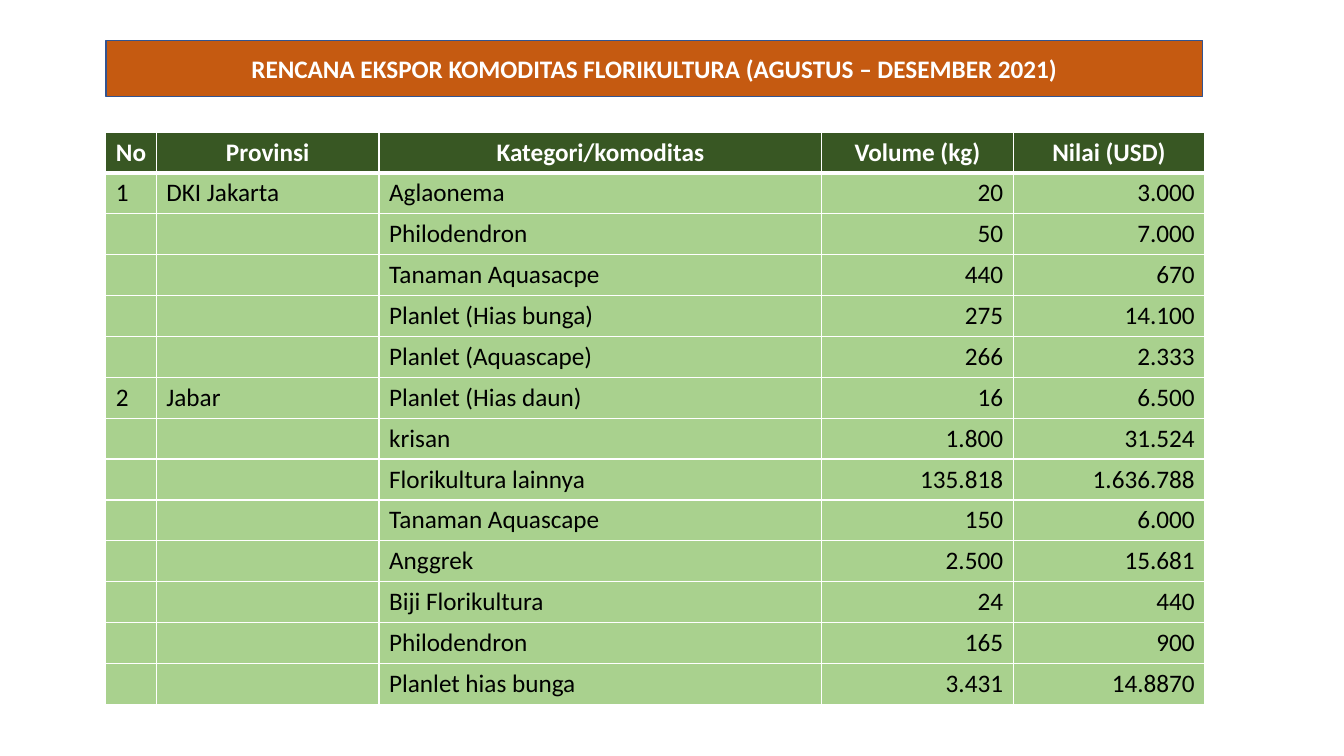
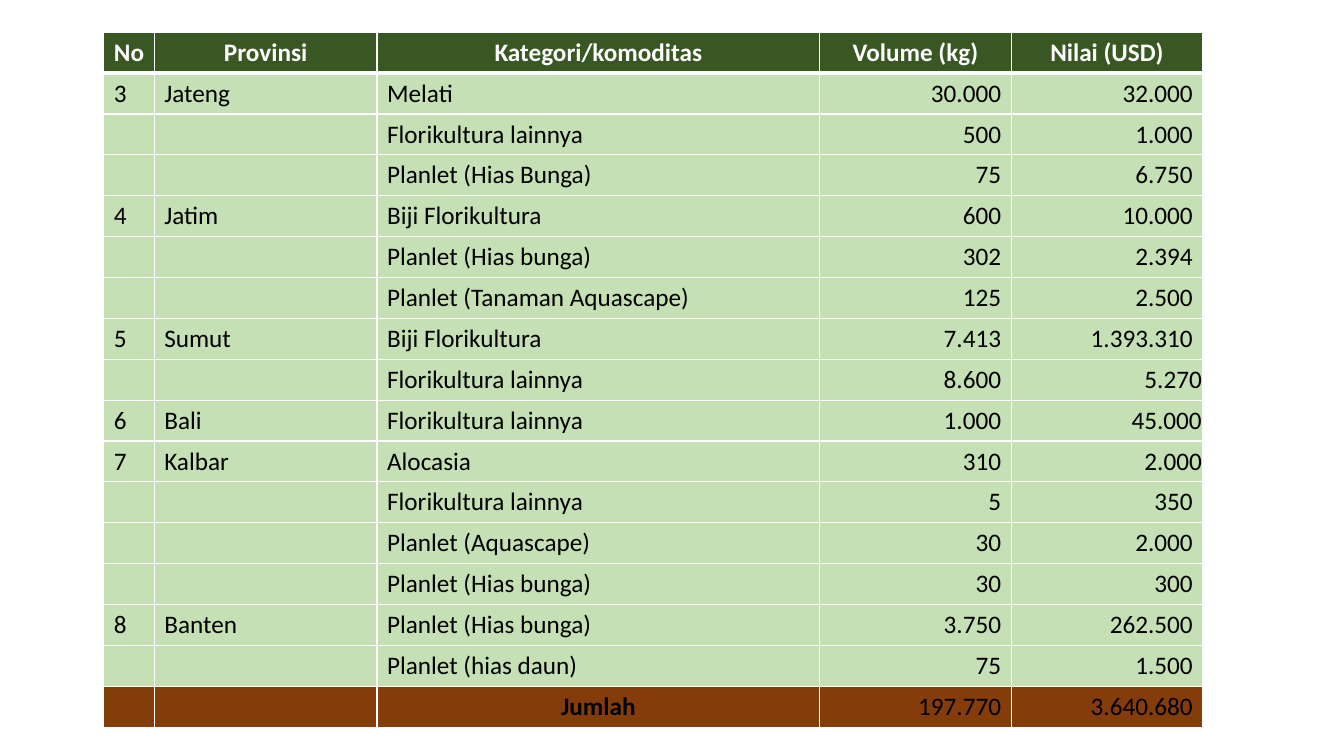
from lxml import etree
from pptx import Presentation
from pptx.dml.color import RGBColor
from pptx.enum import shapes, text
from pptx.oxml import ns
from pptx.util import Inches, Pt

COLORS = {
    "white": "FFFFFF",
    "black": "000000",
    "header": "385723",
    "green": "A9D18E",
    "pale_green": "C5E0B4",
    "total": "843C0B",
    "banner": "C55A11",
    "banner_line": "325491",
}
FONT = "Calibri"
FONT_SIZE = Pt(18)
COLUMN_WIDTHS = [0.5, 2.21, 4.39, 1.9, 1.9]
LEFT, CENTER, RIGHT = text.PP_ALIGN.LEFT, text.PP_ALIGN.CENTER, text.PP_ALIGN.RIGHT
COLUMN_ALIGNMENTS = [LEFT, LEFT, LEFT, RIGHT, RIGHT]

TITLE = "RENCANA EKSPOR KOMODITAS FLORIKULTURA (AGUSTUS – DESEMBER 2021)"
HEADER = ("No", "Provinsi", "Kategori/komoditas", "Volume (kg)", "Nilai (USD)")
TOTAL = ("", "", "Jumlah", "197.770", "3.640.680")

SLIDES = [
    {
        "title": TITLE,
        "box": (1.05, 1.31, 10.9, 5.66),
        "fill": "green",
        "provinces": [
            ("1", "DKI Jakarta", [
                ("Aglaonema", "20", "3.000"),
                ("Philodendron", "50", "7.000"),
                ("Tanaman Aquasacpe", "440", "670"),
                ("Planlet (Hias bunga)", "275", "14.100"),
                ("Planlet (Aquascape)", "266", "2.333"),
            ]),
            ("2", "Jabar", [
                ("Planlet (Hias daun)", "16", "6.500"),
                ("krisan", "1.800", "31.524"),
                ("Florikultura lainnya", "135.818", "1.636.788"),
                ("Tanaman Aquascape", "150", "6.000"),
                ("Anggrek", "2.500", "15.681"),
                ("Biji Florikultura", "24", "440"),
                ("Philodendron", "165", "900"),
                ("Planlet hias bunga", "3.431", "14.8870"),
            ]),
        ],
        "total": None,
        "tight_rows": (),
    },
    {
        "title": None,
        "box": (1.03, 0.32, 10.9, 6.86),
        "fill": "pale_green",
        "provinces": [
            ("3", "Jateng", [
                ("Melati", "30.000", "32.000"),
                ("Florikultura lainnya", "500", "1.000"),
                ("Planlet (Hias Bunga)", "75", "6.750"),
            ]),
            ("4", "Jatim", [
                ("Biji Florikultura", "600", "10.000"),
                ("Planlet (Hias bunga)", "302", "2.394"),
                ("Planlet (Tanaman Aquascape)", "125", "2.500"),
            ]),
            ("5", "Sumut", [
                ("Biji Florikultura", "7.413", "1.393.310"),
                ("Florikultura lainnya", "8.600", "5.270"),
            ]),
            ("6", "Bali", [("Florikultura lainnya", "1.000", "45.000")]),
            ("7", "Kalbar", [
                ("Alocasia", "310", "2.000"),
                ("Florikultura lainnya", "5", "350"),
                ("Planlet (Aquascape)", "30", "2.000"),
                ("Planlet (Hias bunga)", "30", "300"),
            ]),
            ("8", "Banten", [
                ("Planlet (Hias bunga)", "3.750", "262.500"),
                ("Planlet (hias daun)", "75", "1.500"),
            ]),
        ],
        "total": TOTAL,
        "tight_rows": (8, 9, 10),
    },
]


def color(name):
    return RGBColor.from_string(COLORS[name])


def set_fill(item, name):
    item.fill.solid()
    item.fill.fore_color.rgb = color(name)


def format_text(paragraph, alignment, color_name, bold):
    paragraph.alignment = alignment
    for run in paragraph.runs:
        run.font.name = FONT
        run.font.size = FONT_SIZE
        run.font.bold = bold
        run.font.color.rgb = color(color_name)


def set_borders(cell, top, bottom):
    properties = cell._tc.get_or_add_tcPr()
    widths = {"a:lnL": 1, "a:lnR": 1, "a:lnT": top, "a:lnB": bottom}
    for position, (tag, width) in enumerate(widths.items()):
        line = etree.Element(ns.qn(tag), w=str(Pt(width)))
        solid = etree.SubElement(line, ns.qn("a:solidFill"))
        etree.SubElement(solid, ns.qn("a:srgbClr"), val=COLORS["white"])
        properties.insert(position, line)


def table_rows(content):
    rows = [HEADER]
    for number, province, commodities in content["provinces"]:
        for index, commodity in enumerate(commodities):
            label = ("", "") if index else (number, province)
            rows.append(label + commodity)
    if content["total"]:
        rows.append(content["total"])
    return rows


def add_banner(slide, title):
    banner = slide.shapes.add_shape(
        shapes.MSO_SHAPE.RECTANGLE,
        Inches(1.05), Inches(0.4), Inches(10.88), Inches(0.56))
    banner.shadow.inherit = False
    set_fill(banner, "banner")
    banner.line.color.rgb = color("banner_line")
    banner.line.width = Pt(1)
    banner.text_frame.text = title
    banner.text_frame.vertical_anchor = text.MSO_ANCHOR.MIDDLE
    format_text(banner.text_frame.paragraphs[0], CENTER, "white", True)


def add_export_table(slide, content):
    rows = table_rows(content)
    box = [Inches(length) for length in content["box"]]
    table = slide.shapes.add_table(len(rows), len(HEADER), *box).table
    table.horz_banding = False
    for column, width in zip(table.columns, COLUMN_WIDTHS):
        column.width = Inches(width)
    for row_index, row in enumerate(rows):
        is_header = row is HEADER
        is_total = row is TOTAL
        fill = "header" if is_header else "total" if is_total else content["fill"]
        for column_index, value in enumerate(row):
            cell = table.cell(row_index, column_index)
            cell.text_frame.text = value
            is_total_label = is_total and column_index == 2
            strong = is_header or is_total_label
            format_text(
                cell.text_frame.paragraphs[0],
                CENTER if strong else COLUMN_ALIGNMENTS[column_index],
                "white" if is_header else "black",
                strong)
            set_fill(cell, fill)
            set_borders(cell, 3 if row_index == 1 else 1, 3 if is_header else 1)
    for row_index in content["tight_rows"]:
        cell = table.cell(row_index, len(HEADER) - 1)
        cell.vertical_anchor = text.MSO_ANCHOR.MIDDLE
        cell.margin_left = cell.margin_right = cell.margin_top = Inches(0.01)
        cell.margin_bottom = 0


def main():
    presentation = Presentation()
    presentation.slide_width = Inches(13.33)
    presentation.slide_height = Inches(7.5)
    for content in SLIDES:
        slide = presentation.slides.add_slide(presentation.slide_layouts[6])
        add_export_table(slide, content)
        if content["title"]:
            add_banner(slide, content["title"])
    presentation.save("out.pptx")


if __name__ == "__main__":
    main()
